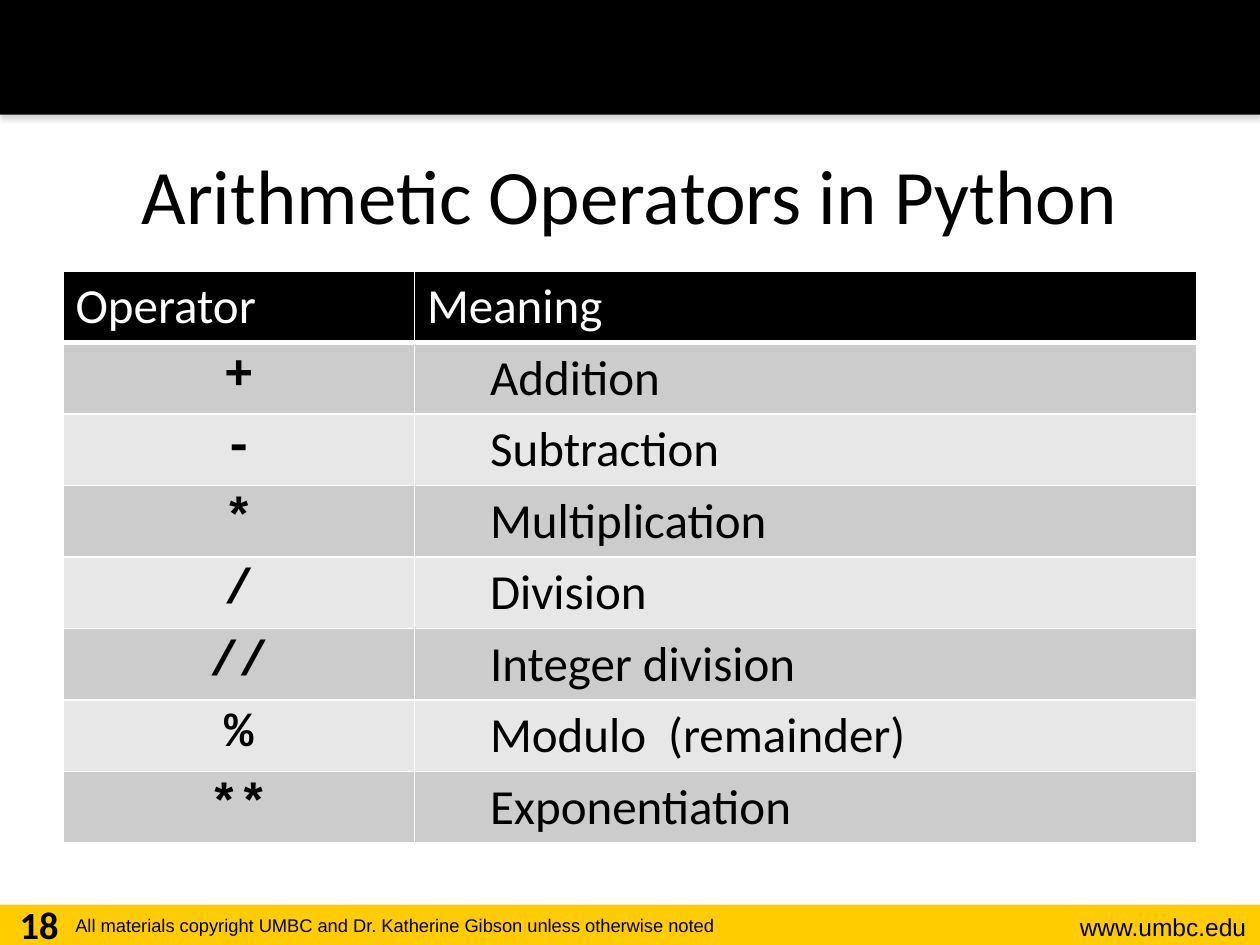
from lxml.etree import SubElement
from pptx import Presentation
from pptx.dml.color import RGBColor
from pptx.enum.shapes import MSO_SHAPE
from pptx.enum.text import MSO_ANCHOR, PP_ALIGN
from pptx.oxml.ns import qn
from pptx.util import Inches, Pt

BLACK, WHITE, GOLD = "000000", "FFFFFF", "FFCC00"
BANDS = ["CCCCCC", "E7E7E7"]
ROWS = [
    ("+", "Addition"),
    ("-", "Subtraction"),
    ("*", "Multiplication"),
    ("/", "Division"),
    ("//", "Integer division"),
    ("%", "Modulo  (remainder)"),
    ("**", "Exponentiation"),
]


def color(code):
    """Turn a hex string into a colour."""
    return RGBColor.from_string(code)


class Deck:
    """Hold the text style and the current slide."""

    base = {"name": "Calibri", "size": Pt(28), "bold": False}

    def __init__(self, slide):
        """Keep the slide to draw on."""
        self.slide = slide

    def words(self, frame, text, align=PP_ALIGN.LEFT, ink=BLACK, **style):
        """Put one styled line into a text frame."""
        frame.text = text
        line = frame.paragraphs[0]
        line.alignment = align
        font = line.runs[0].font
        for key, value in {**self.base, **style}.items():
            setattr(font, key, value)
        font.color.rgb = color(ink)

    def title(self, text, box):
        """Place and fill the title."""
        shape = self.slide.shapes.title
        for key, value in zip(("left", "top", "width", "height"), box):
            setattr(shape, key, Inches(value))
        shape.text_frame.vertical_anchor = MSO_ANCHOR.MIDDLE
        self.words(shape.text_frame, text, PP_ALIGN.CENTER, size=Pt(44))

    def bar(self, box, fill, shade=False):
        """Draw a plain bar, with a soft shadow below if asked."""
        shape = self.slide.shapes.add_shape(MSO_SHAPE.RECTANGLE, *map(Inches, box))
        shape.shadow.inherit = False
        shape.fill.solid()
        shape.fill.fore_color.rgb = color(fill)
        shape.line.fill.background()
        if shade:
            glow = SubElement(
                shape.element.spPr.find(qn("a:effectLst")), qn("a:outerShdw"),
                blurRad=str(Pt(3.1)), dist=str(Pt(1.8)), dir="5400000",
                rotWithShape="0")
            tint = SubElement(glow, qn("a:srgbClr"), val="808080")
            SubElement(tint, qn("a:alpha"), val="35000")

    def label(self, text, box, align=PP_ALIGN.LEFT, **style):
        """Add a text box."""
        frame = self.slide.shapes.add_textbox(*map(Inches, box)).text_frame
        frame.word_wrap = True
        self.words(frame, text, align, **style)

    def cell(self, cell, text, fill, base=1, **style):
        """Fill one table cell and rule its edges in white."""
        props = cell._tc.get_or_add_tcPr()
        for side, width in {"L": 1, "R": 1, "T": 1, "B": base}.items():
            edge = SubElement(props, qn("a:ln" + side), w=str(Pt(width)))
            SubElement(SubElement(edge, qn("a:solidFill")), qn("a:srgbClr"), val=WHITE)
        cell.fill.solid()
        cell.fill.fore_color.rgb = color(fill)
        self.words(cell.text_frame, text, **style)

    def table(self, heads, rows, box, widths):
        """Add the table of signs and their meanings."""
        count = len(rows) + 1
        grid = self.slide.shapes.add_table(count, len(heads), *map(Inches, box)).table
        for col, width in zip(grid.columns, widths):
            col.width = Inches(width)
        for col, head in enumerate(heads):
            self.cell(grid.cell(0, col), head, BLACK, base=3, ink=WHITE)
        for row, (sign, sense) in enumerate(rows, 1):
            fill = BANDS[(row - 1) % 2]
            self.cell(grid.cell(row, 0), sign, fill, align=PP_ALIGN.CENTER,
                      name="Courier New", bold=True)
            self.cell(grid.cell(row, 1), sense, fill)
            grid.cell(row, 1).margin_left = Inches(0.6)


def main():
    """Build the slide and save it."""
    show = Presentation()
    show.slide_width, show.slide_height = Inches(10), Inches(7.5)
    deck = Deck(show.slides.add_slide(show.slide_layouts[5]))
    deck.bar((0, 7.18, 10, 0.32), GOLD)
    deck.bar((0, 0, 10, 0.91), BLACK, shade=True)
    deck.label("www.umbc.edu", (8, 7.19, 1.99, 0.34), PP_ALIGN.RIGHT,
               name="Arial", size=Pt(14))
    deck.label("All materials copyright UMBC and Dr. Katherine Gibson unless otherwise noted",
               (0.5, 7.21, 6.56, 0.29), name="Arial", size=Pt(10.5))
    deck.title("Arithmetic Operators in Python", (0.5, 0.91, 9, 1.25))
    deck.table(("Operator", "Meaning"), ROWS, (0.5, 2.15, 9, 4.53), (2.79, 6.21))
    deck.label("18", (0, 7.1, 0.62, 0.4), PP_ALIGN.CENTER, size=Pt(22), bold=True)
    show.save("out.pptx")


if __name__ == "__main__":
    main()
